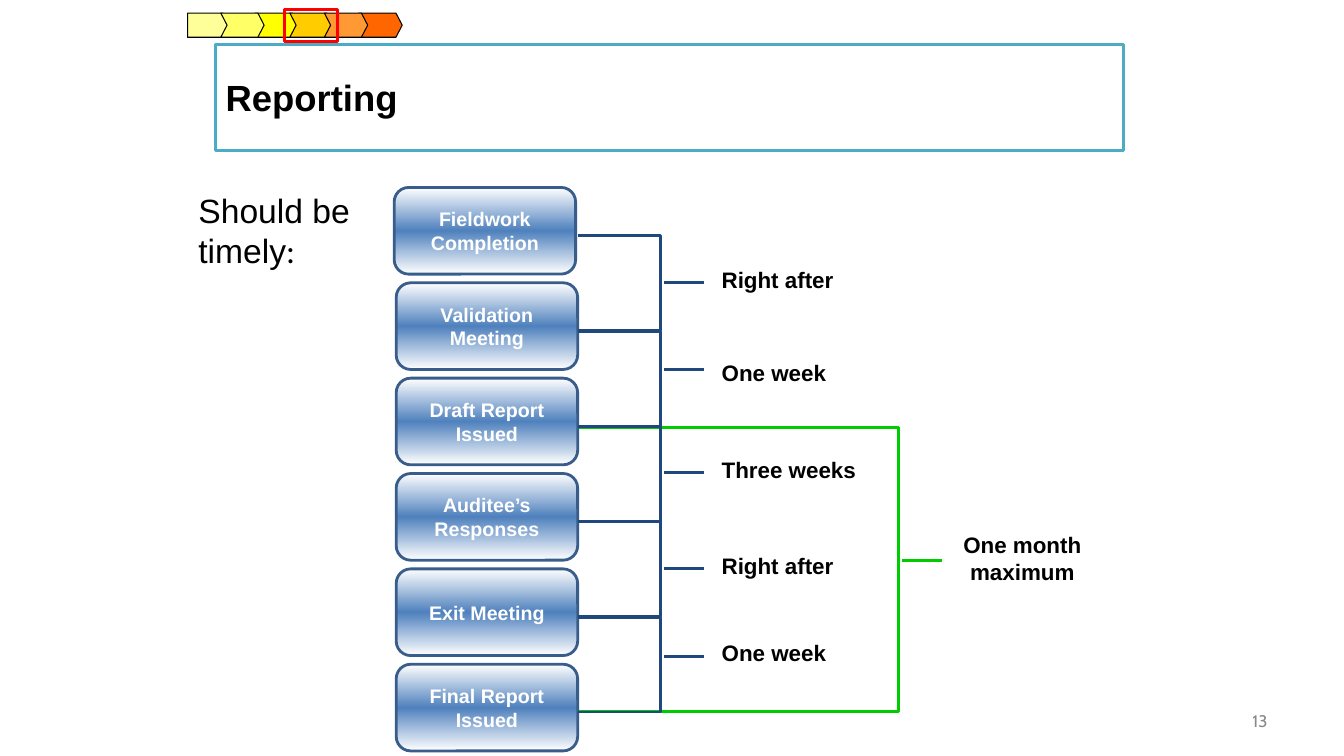
import copy
from dataclasses import dataclass

import pptx
import pptx.dml.color
import pptx.enum.shapes
import pptx.enum.text
import pptx.util
from lxml import etree
from pptx.oxml.ns import qn

Inches = pptx.util.Inches
Pt = pptx.util.Pt
Shape = pptx.enum.shapes.MSO_SHAPE
Align = pptx.enum.text.PP_ALIGN
Anchor = pptx.enum.text.MSO_ANCHOR

NAVY = "1F497D"
GREEN = "00CC00"
BLACK = "000000"
WHITE = "FFFFFF"

STAGE_TOP = 1.86
STAGE_STEP = (6.59 - STAGE_TOP) / 5
STAGE_RIGHT = 5.73
BRACKET_TOP = 2.34
CHEVRON_LEFT = 2.19
CHEVRON_STEP = (3.56 - CHEVRON_LEFT) / 4


@dataclass
class Area:
    left: float
    top: float
    width: float
    height: float

    def lengths(self) -> tuple:
        return tuple(Inches(value) for value in (self.left, self.top, self.width, self.height))


@dataclass
class Style:
    size: float
    color: str = BLACK
    bold: bool = True
    name: str = "Arial"
    align: Align = Align.LEFT


@dataclass
class Interval:
    text: str
    area: Area
    tick_top: float


@dataclass
class Chevron:
    slot: int
    color: str


STAGES = [
    "Fieldwork Completion",
    "Validation Meeting",
    "Draft Report Issued",
    "Auditee’s Responses",
    "Exit Meeting",
    "Final Report Issued",
]
INTERVALS = [
    Interval("Right after", Area(7.06, 2.59, 1.33, 0.37), 2.8),
    Interval("One week", Area(7.06, 3.51, 1.25, 0.37), 3.67),
    Interval("Three weeks", Area(7.06, 4.48, 1.55, 0.37), 4.69),
    Interval("Right after", Area(7.06, 5.43, 1.33, 0.37), 5.64),
    Interval("One week", Area(7.06, 6.29, 1.25, 0.37), 6.51),
]
CHEVRONS = [
    Chevron(1, "FFFF00"),
    Chevron(2, "FFCC00"),
    Chevron(4, "FF6600"),
    Chevron(3, "FF9933"),
    Chevron(0, "FFFF66"),
]


def rgb(color: str) -> pptx.dml.color.RGBColor:
    return pptx.dml.color.RGBColor.from_string(color)


def set_line(shape, color: str, width: float) -> None:
    shape.line.color.rgb = rgb(color)
    shape.line.width = Pt(width)


def set_fill(shape, color: str | None) -> None:
    if color is None:
        shape.fill.background()
    else:
        shape.fill.solid()
        shape.fill.fore_color.rgb = rgb(color)


def set_stage_gradient(shape) -> None:
    shape.fill.gradient()
    shape.fill.gradient_angle = 90
    stop_list = shape.element.find(".//" + qn("a:gsLst"))
    stop_list.insert(1, copy.deepcopy(stop_list[0]))
    for stop, position, color in zip(
        shape.fill.gradient_stops, (0, 0.5, 1), (WHITE, "4F81BD", WHITE)
    ):
        stop.position = position
        stop.color.rgb = rgb(color)


def style_paragraph(para, style: Style) -> None:
    para.alignment = style.align
    para.font.size = Pt(style.size)
    para.font.bold = style.bold
    para.font.name = style.name
    para.font.color.rgb = rgb(style.color)


def add_preset(page, kind: Shape, area: Area, fill: str | None, line: str, width: float):
    shape = page.shapes.add_shape(kind, *area.lengths())
    shape.shadow.inherit = False
    set_fill(shape, fill)
    set_line(shape, line, width)
    return shape


def write_centred_vertically(shape, text: str, style: Style) -> None:
    frame = shape.text_frame
    frame.word_wrap = True
    frame.vertical_anchor = Anchor.MIDDLE
    frame.text = text
    style_paragraph(frame.paragraphs[0], style)


def add_label(page, area: Area, text: str, style: Style, wrap: bool = True):
    box = page.shapes.add_textbox(*area.lengths())
    box.text_frame.word_wrap = wrap
    box.text_frame.text = text
    style_paragraph(box.text_frame.paragraphs[0], style)
    return box


def add_bracket(page, top: float, bottom: float, right: float, color: str) -> None:
    builder = page.shapes.build_freeform(Inches(STAGE_RIGHT), Inches(top))
    corners = [(right, top), (right, bottom), (STAGE_RIGHT, bottom)]
    builder.add_line_segments([(Inches(x), Inches(y)) for x, y in corners], close=False)
    bracket = builder.convert_to_shape()
    bracket.shadow.inherit = False
    set_fill(bracket, None)
    set_line(bracket, color, 2)


def add_tick(page, left: float, top: float, color: str) -> None:
    tick = page.shapes.add_connector(
        pptx.enum.shapes.MSO_CONNECTOR.STRAIGHT,
        Inches(left), Inches(top), Inches(left + 0.39), Inches(top),
    )
    set_line(tick, color, 2)
    etree.SubElement(tick.element.spPr, qn("a:effectLst"))


def add_progress_bar(page) -> None:
    start = add_preset(page, Shape.PENTAGON, Area(1.86, 0.13, 0.41, 0.24), "FFFF99", BLACK, 0.75)
    start.adjustments[0] = 0.25
    for chevron in CHEVRONS:
        left = CHEVRON_LEFT + chevron.slot * CHEVRON_STEP
        area = Area(left, 0.13, 0.43, 0.24)
        shape = add_preset(page, Shape.CHEVRON, area, chevron.color, BLACK, 0.75)
        shape.adjustments[0] = 0.26
    add_preset(page, Shape.RECTANGLE, Area(2.82, 0.09, 0.53, 0.32), None, "FF0000", 2.25)


def add_timeline(page) -> None:
    add_bracket(page, 4.24, 7.06, 8.91, GREEN)
    for index, stage in enumerate(STAGES):
        left = 3.91 if index == 0 else 3.93
        area = Area(left, STAGE_TOP + index * STAGE_STEP, 1.8, 0.86)
        shape = add_preset(page, Shape.ROUNDED_RECTANGLE, area, None, "385D8A", 2)
        set_stage_gradient(shape)
        write_centred_vertically(shape, stage, Style(14, WHITE, align=Align.CENTER))
    for index, interval in enumerate(INTERVALS):
        top = BRACKET_TOP + index * STAGE_STEP
        add_bracket(page, top, top + 0.94, 6.55, NAVY)
        add_tick(page, 6.59, interval.tick_top, NAVY)
        add_label(page, interval.area, interval.text, Style(16), wrap=False)
    add_tick(page, 8.95, 5.56, GREEN)
    maximum_style = Style(16, align=Align.CENTER)
    add_label(page, Area(9.36, 5.22, 1.56, 0.64), "One month maximum", maximum_style)


def main() -> None:
    deck = pptx.Presentation()
    deck.slide_width = Inches(13.33)
    deck.slide_height = Inches(7.5)
    page = deck.slides.add_slide(deck.slide_layouts[6])

    title = add_preset(page, Shape.RECTANGLE, Area(2.14, 0.44, 9, 1.05), WHITE, "4BACC6", 2)
    write_centred_vertically(title, "Reporting", Style(26))
    add_progress_bar(page)

    intro_style = Style(24, bold=False)
    intro = add_label(page, Area(1.87, 1.83, 2.17, 1.31), "Should be timely", intro_style)
    colon = intro.text_frame.paragraphs[0].add_run()
    colon.text = ":"
    colon.font.name = "Calibri"

    add_timeline(page)

    number_style = Style(12, "898989", False, "Cabin", Align.RIGHT)
    number = add_label(page, Area(9.56, 6.95, 3.11, 0.4), "13", number_style)
    number.text_frame.vertical_anchor = Anchor.MIDDLE
    deck.save("out.pptx")


if __name__ == "__main__":
    main()
